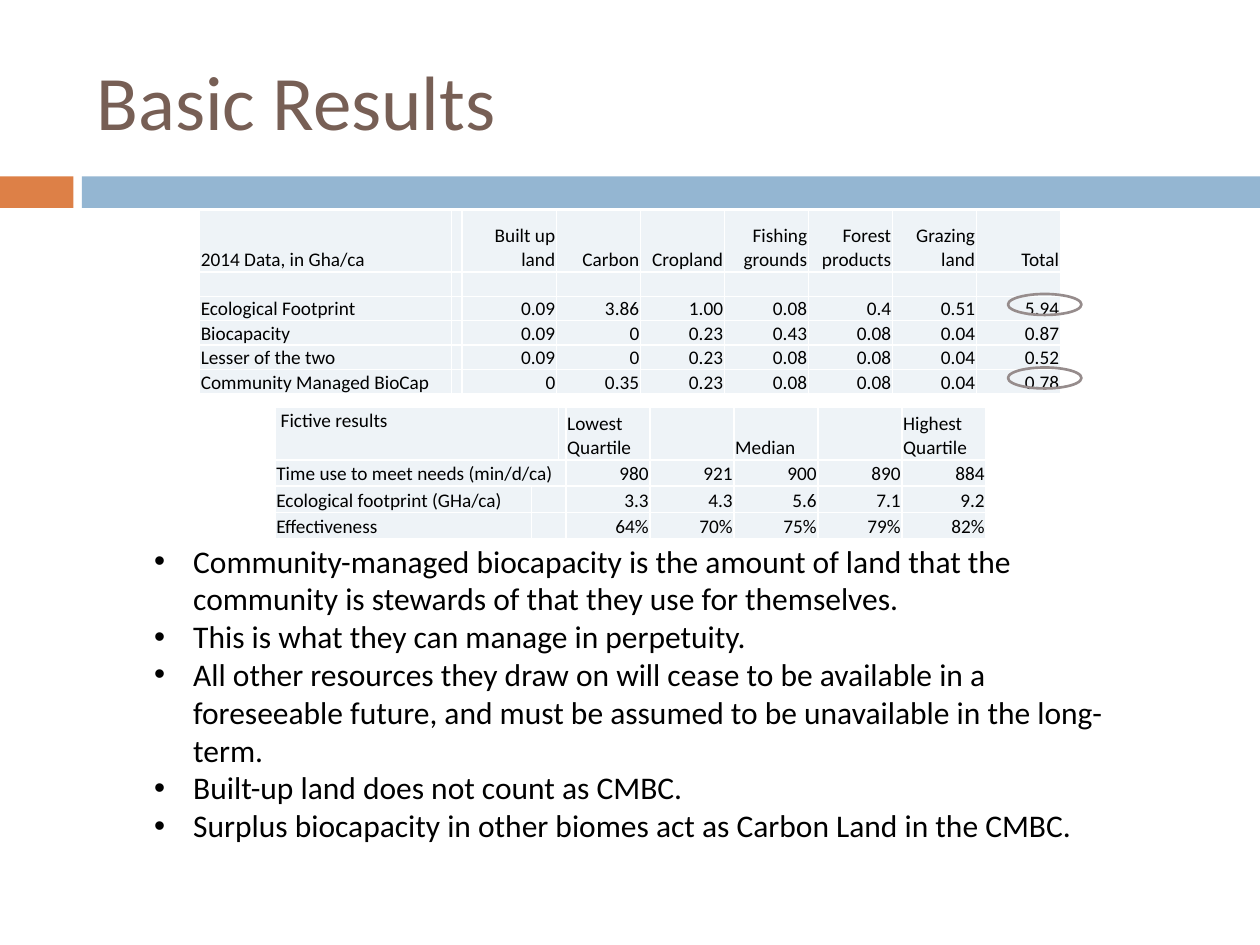
from dataclasses import dataclass
from lxml import etree
from pptx import Presentation
from pptx import util as u
from pptx.dml.color import RGBColor
from pptx.enum import shapes, text
from pptx.oxml.ns import qn


@dataclass(frozen=True)
class Theme:
    font: str = "Calibri"
    title: str = "775F55"
    accent: str = "DD8047"
    band: str = "94B6D2"
    cell: str = "EEF3F7"
    border: str = "FFFFFF"
    ring: str = "968C8C"
    ink: str = "000000"
    title_size: int = 44
    body_size: int = 18
    table_size: int = 11


@dataclass(frozen=True)
class Area:
    col: float
    row: float
    cols: float
    rows: float

    def emu(self) -> list[int]:
        return [cells(n) for n in (self.col, self.row, self.cols, self.rows)]


@dataclass(frozen=True)
class DataTable:
    col: float
    row: float
    widths: list[float]
    heights: list[float]
    content: list[list[str]]
    header_align: text.PP_ALIGN
    merges: tuple[tuple[int, int, int], ...] = ()


THEME = Theme()
GRID_COLUMNS = 120
SLIDE_WIDTH, SLIDE_HEIGHT = u.Inches(10), u.Inches(7.5)

BANDS = [(Area(0, 16.8, 7, 3), THEME.accent), (Area(7.8, 16.8, 112.2, 3), THEME.band)]
RINGS = [Area(96, row, 7, 2) for row in (28, 35)]

FOOTPRINTS = DataTable(
    19, 20, [24, 1, 9] + [8] * 6, [5.9] + [2] * 5,
    [
        ["2014 Data, in Gha/ca", "", "Built up land", "Carbon", "Cropland",
         "Fishing grounds", "Forest products", "Grazing land", "Total"],
        [""] * 9,
        ["Ecological Footprint", "", "0.09", "3.86", "1.00", "0.08", "0.4", "0.51", "5.94"],
        ["Biocapacity", "", "0.09", "0", "0.23", "0.43", "0.08", "0.04", "0.87"],
        ["Lesser of the two", "", "0.09", "0", "0.23", "0.08", "0.08", "0.04", "0.52"],
        ["Community Managed BioCap", "", "0", "0.35", "0.23", "0.08", "0.08", "0.04", "0.78"],
    ],
    text.PP_ALIGN.RIGHT,
)
QUARTILES = DataTable(
    26.2, 38.8, [24.4, 2.6, 0.7] + [8] * 5, [5] + [2.5] * 3,
    [
        ["\u00a0Fictive results", "", "", "Lowest Quartile", "", "Median", "", "Highest Quartile"],
        ["Time use to meet needs (min/d/ca)", "", "", "980", "921", "900", "890", "884"],
        ["Ecological footprint (GHa/ca)", "", "", "3.3", "4.3", "5.6", "7.1", "9.2"],
        ["Effectiveness", "", "", "64%", "70%", "75%", "79%", "82%"],
    ],
    text.PP_ALIGN.LEFT,
    ((0, 0, 1), (1, 0, 2), (2, 1, 2), (3, 1, 2)),
)
CONCLUSIONS = [
    "Community-managed biocapacity is the amount of land that the community is "
    "stewards of that they use for themselves.",
    "This is what they can manage in perpetuity.",
    "All other resources they draw on will cease to be available in a foreseeable "
    "future, and must be assumed to be unavailable in the long-term.",
    "Built-up land does not count as CMBC.",
    "Surplus biocapacity in other biomes act as Carbon Land in the CMBC.",
]


def cells(count: float) -> int:
    return round(count * SLIDE_WIDTH / GRID_COLUMNS)


def style_runs(paragraph, size: int, color: str) -> None:
    for run in paragraph.runs:
        run.font.name = THEME.font
        run.font.size = u.Pt(size)
        run.font.color.rgb = RGBColor.from_string(color)


def add_band(slide, area: Area, color: str) -> None:
    band = slide.shapes.add_shape(shapes.MSO_SHAPE.RECTANGLE, *area.emu())
    band.shadow.inherit = False
    band.fill.solid()
    band.fill.fore_color.rgb = RGBColor.from_string(color)
    band.line.fill.background()


def add_ring(slide, area: Area) -> None:
    ring = slide.shapes.add_shape(shapes.MSO_SHAPE.OVAL, *area.emu())
    ring.shadow.inherit = False
    ring.fill.background()
    ring.line.color.rgb = RGBColor.from_string(THEME.ring)
    ring.line.width = u.Pt(1.5)


def add_title(slide, wording: str) -> None:
    frame = slide.shapes.add_textbox(*Area(8, 3, 107, 13).emu()).text_frame
    frame.word_wrap = True
    frame.vertical_anchor = text.MSO_ANCHOR.MIDDLE
    frame.text = wording
    style_runs(frame.paragraphs[0], THEME.title_size, THEME.title)


def add_conclusions(slide, points: list[str]) -> None:
    frame = slide.shapes.add_textbox(*Area(13.5, 51, 93, 30.2).emu()).text_frame
    frame.word_wrap = True
    frame.auto_size = text.MSO_AUTO_SIZE.SHAPE_TO_FIT_TEXT
    frame.text = "\n".join(points)
    indent = u.Inches(0.31)
    for point in frame.paragraphs:
        style_runs(point, THEME.body_size, THEME.ink)
        properties = point._p.get_or_add_pPr()
        properties.set("marL", str(indent))
        properties.set("indent", str(-indent))
        etree.SubElement(properties, qn("a:buFont"), typeface="Arial")
        etree.SubElement(properties, qn("a:buChar"), char="•")


def style_cell(cell, wording: str, align: text.PP_ALIGN) -> None:
    cell.margin_left = cell.margin_right = cell.margin_top = u.Inches(0.01)
    cell.margin_bottom = 0
    cell.vertical_anchor = text.MSO_ANCHOR.BOTTOM
    properties = cell._tc.get_or_add_tcPr()
    for side in ("lnL", "lnR", "lnT", "lnB"):
        edge = etree.SubElement(properties, qn(f"a:{side}"), w=str(u.Pt(1)))
        paint = etree.SubElement(edge, qn("a:solidFill"))
        etree.SubElement(paint, qn("a:srgbClr"), val=THEME.border)
    cell.fill.solid()
    cell.fill.fore_color.rgb = RGBColor.from_string(THEME.cell)
    paragraph = cell.text_frame.paragraphs[0]
    if wording:
        paragraph.text = wording
        paragraph.alignment = align
        style_runs(paragraph, THEME.table_size, THEME.ink)
    else:
        etree.SubElement(paragraph._p, qn("a:endParaRPr"), sz=str(THEME.table_size * 100))


def add_data_table(slide, data: DataTable):
    area = Area(data.col, data.row, sum(data.widths), sum(data.heights))
    table = slide.shapes.add_table(
        len(data.heights), len(data.widths), *area.emu()).table
    table.first_row = table.horz_banding = False
    for column, width in zip(table.columns, data.widths):
        column.width = cells(width)
    for row, height in zip(table.rows, data.heights):
        row.height = cells(height)
    for r, row_content in enumerate(data.content):
        for c, wording in enumerate(row_content):
            align = data.header_align if r == 0 else text.PP_ALIGN.RIGHT
            style_cell(table.cell(r, c), wording, align if c else text.PP_ALIGN.LEFT)
    for r, first, last in data.merges:
        table.cell(r, first).merge(table.cell(r, last))
    return table


def main() -> None:
    deck = Presentation()
    deck.slide_width, deck.slide_height = SLIDE_WIDTH, SLIDE_HEIGHT
    slide = deck.slides.add_slide(deck.slide_layouts[6])
    for area, color in BANDS:
        add_band(slide, area, color)
    add_title(slide, "Basic Results")
    add_data_table(slide, FOOTPRINTS)
    quartiles = add_data_table(slide, QUARTILES)
    quartiles.cell(0, 0).vertical_anchor = text.MSO_ANCHOR.TOP
    add_conclusions(slide, CONCLUSIONS)
    for area in RINGS:
        add_ring(slide, area)
    deck.save("out.pptx")


if __name__ == "__main__":
    main()
